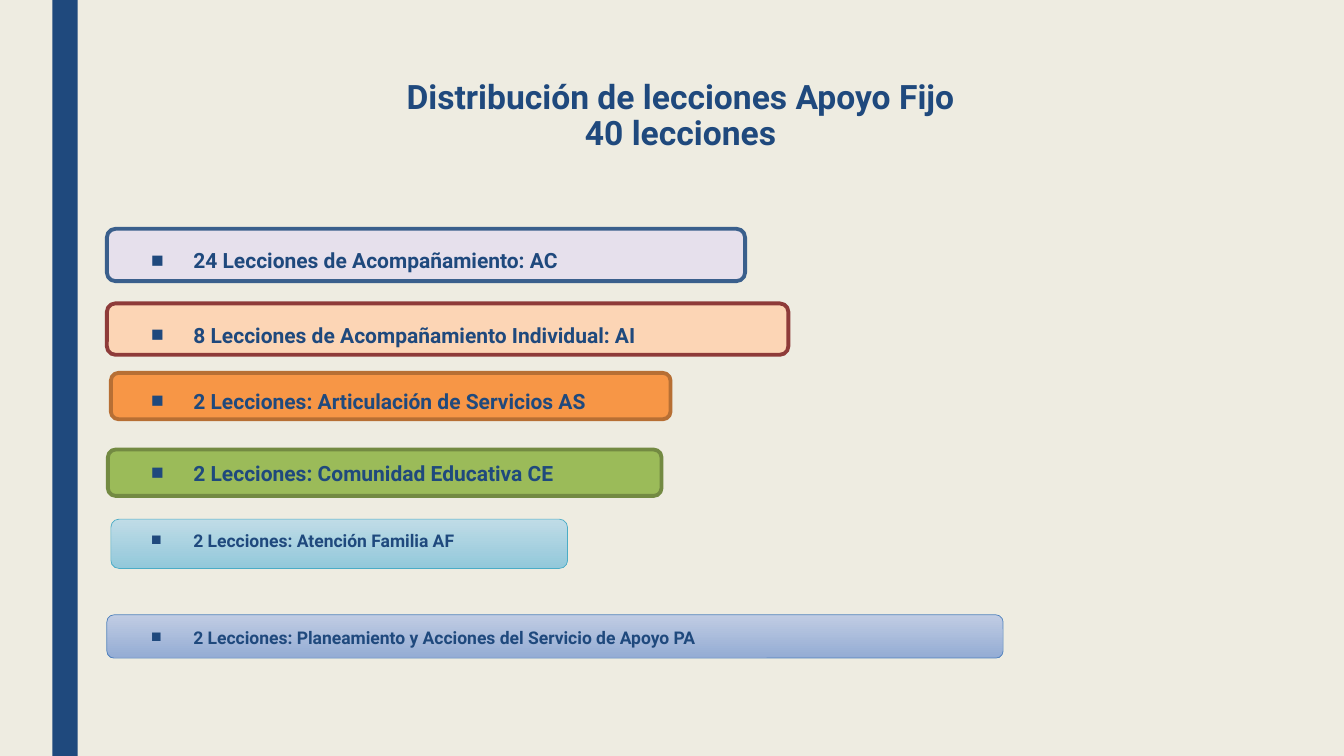
from dataclasses import dataclass

from lxml import etree
from pptx import Presentation, util as u
from pptx.dml.color import RGBColor
from pptx.enum import shapes, text
from pptx.oxml.ns import qn


@dataclass(frozen=True)
class Theme:
    face: str = "Roboto"
    navy: str = "1F497D"
    paper: str = "EEECE1"
    head: float = 24
    big: float = 15
    small: float = 12.5
    thick: float = 2.75
    thin: float = 0.5


T = Theme()
WIDE, HIGH = u.Inches(13.33), u.Inches(7.5)
COL, ROW = WIDE / 100, HIGH / 100

# label, type size, space before, bar (dx, dy, width, height), fills, line, line width
ITEMS = [
    ("24 Lecciones de Acompañamiento: AC", T.big, 0,
     (0, 1.07, 47.49, 6.93), ["E6E0EC"], "3A5F8C", T.thick),
    ("8 Lecciones de Acompañamiento Individual: AI", T.big, 37.8,
     (0, 10.93, 50.71, 6.8), ["FCD5B5"], "8E3B39", T.thick),
    ("2 Lecciones: Articulación de Servicios AS", T.big, 31.8,
     (0.3, 20.13, 41.64, 6.13), ["F79646"], "B76F34", T.thick),
    ("2 Lecciones: Comunidad Educativa CE", T.big, 36,
     (0.08, 30.27, 41.19, 6.13), ["9BBB59"], "738A42", T.thick),
    ("2 Lecciones: Atención Familia AF", T.small, 33.5,
     (0.3, 39.47, 33.98, 6.53), ["C0DCE7", "92C8DA"], "4BACC6", T.thin),
    ("2 Lecciones: Planeamiento y Acciones del Servicio de Apoyo PA", T.small, 56.4,
     (0, 52.13, 66.69, 5.73), ["C0CCE3", "94ACD4"], "4F81BD", T.thin),
]


def rgb(code):
    return RGBColor.from_string(code)


def place(box):
    """Turn columns and rows into slide lengths."""
    x, y, w, h = box
    return [round(n) for n in (x * COL, y * ROW, w * COL, h * ROW)]


def shape(slide, kind, box, fills, line=None, width=0):
    item = slide.shapes.add_shape(kind, *place(box))
    item.shadow.inherit = False
    if len(fills) == 1:
        item.fill.solid()
        item.fill.fore_color.rgb = rgb(fills[0])
    else:
        item.fill.gradient()
        item.fill.gradient_angle = 270
        for stop, code in zip(item.fill.gradient_stops, fills):
            stop.color.rgb = rgb(code)
    if line:
        item.line.color.rgb = rgb(line)
        item.line.width = u.Pt(width)
    else:
        item.line.fill.background()


def frame(slide, box, top=0.05):
    body = slide.shapes.add_textbox(*place(box)).text_frame
    body.word_wrap = True
    body.vertical_anchor = text.MSO_ANCHOR.TOP
    body.margin_top = u.Inches(top)
    return body


def write(para, words, size, align=text.PP_ALIGN.LEFT, lines=1.0, before=0, after=0):
    para.text = words
    para.alignment = align
    para.line_spacing = lines
    para.space_before, para.space_after = u.Pt(before), u.Pt(after)
    for run in para.runs:
        font = run.font
        font.name, font.size, font.bold = T.face, u.Pt(size), True
        font.color.rgb = rgb(T.navy)


def bullet(para):
    props = para._p.get_or_add_pPr()
    indent = u.Inches(0.42)
    props.set("marL", str(indent))
    props.set("indent", str(-indent))
    tint = etree.SubElement(props, qn("a:buClr"))
    etree.SubElement(tint, qn("a:srgbClr")).set("val", T.navy)
    etree.SubElement(props, qn("a:buFont")).set("typeface", "Arial")
    etree.SubElement(props, qn("a:buChar")).set("char", "■")


def title(slide, box):
    write(frame(slide, box).paragraphs[0],
          "Distribución de lecciones Apoyo Fijo\v40 lecciones",
          T.head, align=text.PP_ALIGN.CENTER, lines=0.89)


def lessons(slide, box):
    """Coloured bars with one bulleted list laid over them."""
    x, y, w, h = box
    for *_, (dx, dy, bw, bh), fills, line, width in reversed(ITEMS):
        shape(slide, shapes.MSO_SHAPE.ROUNDED_RECTANGLE,
              (x + dx, y + dy, bw, bh), fills, line, width)
    pad = 2.55
    body = frame(slide, (x + pad, y, w - pad, h), top=0.33)
    for i, (words, size, before, *_) in enumerate(ITEMS):
        para = body.add_paragraph() if i else body.paragraphs[0]
        write(para, words, size, lines=0.74, before=before, after=2)
        bullet(para)


def main():
    deck = Presentation()
    deck.slide_width, deck.slide_height = WIDE, HIGH
    slide = deck.slides.add_slide(deck.slide_layouts[6])
    slide.background.fill.solid()
    slide.background.fill.fore_color.rgb = rgb(T.paper)
    shape(slide, shapes.MSO_SHAPE.RECTANGLE, (3.9, 0, 1.88, 100), [T.navy])
    lessons(slide, (7.95, 29.2, 81.32, 57.2))
    title(slide, (11.25, 10, 78.77, 21.6))
    deck.save("out.pptx")


if __name__ == "__main__":
    main()
